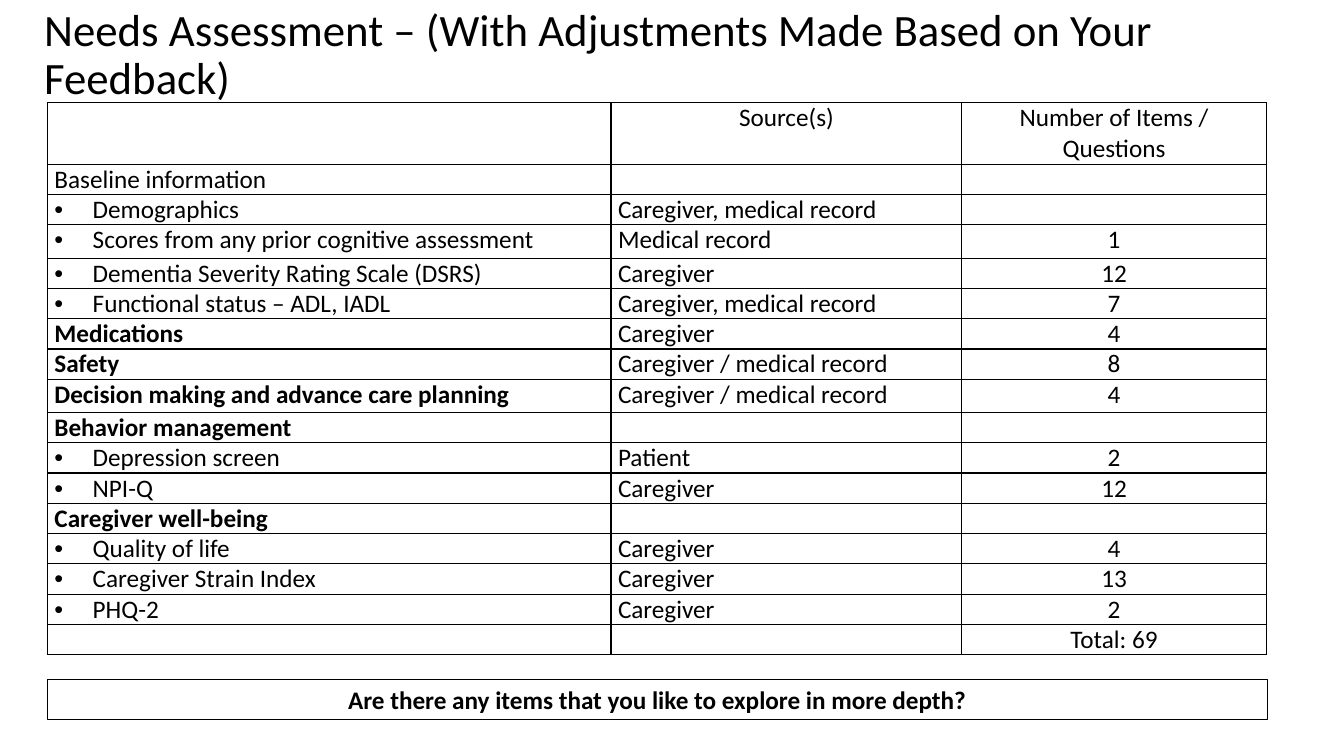
from lxml.etree import SubElement
from pptx import Presentation
from pptx.dml.color import RGBColor
from pptx.enum.shapes import MSO_SHAPE
from pptx.enum.text import MSO_ANCHOR, PP_ALIGN
from pptx.oxml.ns import qn
from pptx.util import Inches, Pt

INK = "000000"
LEFT, WIDTH = 0.47, 12.1
COLS = (5.59, 3.48, 3.02)
HEAD, ROW, TALL = 0.61, 0.3, 0.33
TALL_ROWS = (3, 8)
PAD = {"margin_left": Inches(0.07), "margin_right": Inches(0.07),
       "margin_top": 0, "margin_bottom": 0}
ITEMS = (
    ("", "Source(s)", "Number of Items / Questions"),
    ("Baseline information", "", ""),
    ("• Demographics", "Caregiver, medical record", ""),
    ("• Scores from any prior cognitive assessment", "Medical record", "1"),
    ("• Dementia Severity Rating Scale (DSRS)", "Caregiver", "12"),
    ("• Functional status – ADL, IADL", "Caregiver, medical record", "7"),
    ("*Medications", "Caregiver", "4"),
    ("*Safety", "Caregiver / medical record", "8"),
    ("*Decision making and advance care planning",
     "Caregiver / medical record", "4"),
    ("*Behavior management", "", ""),
    ("• Depression screen", "Patient", "2"),
    ("• NPI-Q", "Caregiver", "12"),
    ("*Caregiver well-being", "", ""),
    ("• Quality of life", "Caregiver", "4"),
    ("• Caregiver Strain Index", "Caregiver", "13"),
    ("• PHQ-2", "Caregiver", "2"),
    ("", "", "Total: 69"),
)


def color(code):
    """Turn a hex string into a colour."""
    return RGBColor.from_string(code)


def assign(thing, values):
    """Set each attribute named in a dict."""
    for name, value in values.items():
        setattr(thing, name, value)


def write(frame, text, size=18, bold=False, align=PP_ALIGN.LEFT):
    """Put one styled line in a text frame and return its paragraph."""
    para = frame.paragraphs[0]
    para.alignment = align
    if text:
        run = para.add_run()
        run.text = text
        assign(run.font, {"name": "Calibri", "size": Pt(size), "bold": bold})
        run.font.color.rgb = color(INK)
    return para


def bullet(para):
    """Give a paragraph a round bullet and a hanging indent."""
    props = para._p.get_or_add_pPr()
    props.set("marL", str(Inches(0.38)))
    props.set("indent", str(-Inches(0.38)))
    SubElement(props, qn("a:buFont"), typeface="Arial")
    SubElement(props, qn("a:buChar"), char="•")


def border(cell):
    """Draw a thin line on all four sides of a cell."""
    props = cell._tc.get_or_add_tcPr()
    for side in ("lnL", "lnR", "lnT", "lnB"):
        line = SubElement(props, qn(f"a:{side}"), w=str(Pt(1)))
        fill = SubElement(line, qn("a:solidFill"))
        SubElement(fill, qn("a:srgbClr"), val=INK)


def title(slide, text):
    """Add the slide heading."""
    box = slide.shapes.add_textbox(Inches(0.34), Inches(-0.17),
                                   Inches(11.5), Inches(1.45))
    frame = box.text_frame
    assign(frame, {"word_wrap": True, "vertical_anchor": MSO_ANCHOR.MIDDLE})
    write(frame, text, 32).line_spacing = 0.9


def entry(cell, text, align):
    """Fill a cell, where * marks bold and • marks a bullet."""
    assign(cell, PAD)
    border(cell)
    cell.fill.background()
    para = write(cell.text_frame, text.lstrip("*• "),
                 bold=text.startswith("*"), align=align)
    if text.startswith("•"):
        bullet(para)


def grid(slide):
    """Add the table of assessment items."""
    highs = [HEAD] + [TALL if num in TALL_ROWS else ROW
                      for num in range(1, len(ITEMS))]
    table = slide.shapes.add_table(
        len(ITEMS), len(COLS), Inches(LEFT), Inches(1.02),
        Inches(WIDTH), Inches(sum(highs))).table
    assign(table, {"first_row": False, "horz_banding": False})
    for col, wide in zip(table.columns, COLS):
        col.width = Inches(wide)
    for num, (item, high) in enumerate(zip(ITEMS, highs)):
        table.rows[num].height = Inches(high)
        for pos, text in enumerate(item):
            mid = pos == 2 or num == 0
            entry(table.cell(num, pos), text,
                  PP_ALIGN.CENTER if mid else PP_ALIGN.LEFT)


def prompt(slide, text):
    """Add the framed question below the table."""
    box = slide.shapes.add_shape(MSO_SHAPE.RECTANGLE, Inches(LEFT),
                                 Inches(6.74), Inches(WIDTH), Inches(0.4))
    box.shadow.inherit = False
    box.fill.background()
    box.line.color.rgb = color(INK)
    box.line.width = Pt(0.75)
    box.text_frame.word_wrap = True
    write(box.text_frame, text, bold=True, align=PP_ALIGN.CENTER)


def main():
    """Build and save the slide."""
    deck = Presentation()
    assign(deck, {"slide_width": Inches(13.33), "slide_height": Inches(7.5)})
    slide = deck.slides.add_slide(deck.slide_layouts[6])
    title(slide, "Needs Assessment – (With Adjustments Made Based on "
                 "Your Feedback)")
    grid(slide)
    prompt(slide, "Are there any items that you like to explore "
                  "in more depth?")
    deck.save("out.pptx")


if __name__ == "__main__":
    main()
